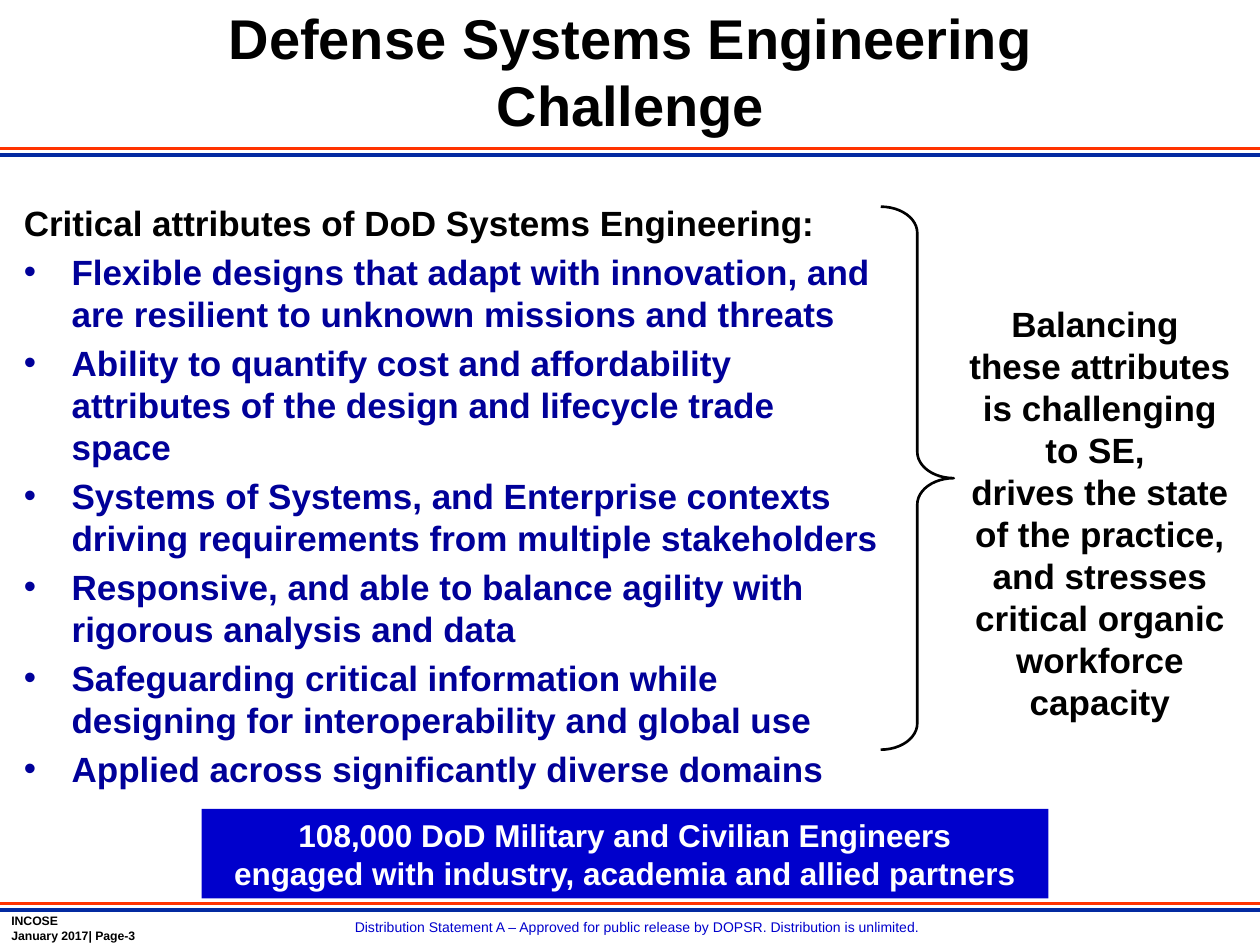
from lxml import etree
from pptx import Presentation
from pptx import util as u
from pptx.dml.color import RGBColor
from pptx.enum import shapes, text
from pptx.oxml import ns

WIDTH, HEIGHT = 10, 7.5
BLACK = RGBColor(0, 0, 0)
WHITE = RGBColor(255, 255, 255)
NAVY = RGBColor(0, 0, 0x99)
BLUE = RGBColor(0, 0, 0xCC)
RULE_BLUE = RGBColor(0x03, 0x2A, 0xA1)
RULE_RED = RGBColor(0xFF, 0x33, 0)
INDENT = 0.38

ATTRIBUTES = [
    "Flexible designs that adapt with innovation, and are resilient to unknown missions and threats",
    "Ability to quantify cost and affordability attributes of the design and lifecycle trade space",
    "Systems of Systems, and Enterprise contexts driving requirements from multiple stakeholders",
    "Responsive, and able to balance agility with rigorous analysis and data",
    "Safeguarding critical information while designing for interoperability and global use",
    "Applied across significantly diverse domains",
]
BALANCE = [
    "Balancing \vthese attributes\vis challenging\vto SE, ",
    "drives the state of the practice, and stresses critical organic workforce capacity",
]
ENGINEERS = [
    "108,000 DoD Military and Civilian Engineers",
    "engaged with industry, academia and allied partners",
]
RELEASE = ("Distribution Statement A – Approved for public release by DOPSR. "
           "Distribution is unlimited.")


def share(left, top, width, height):
    return [u.Inches(length) for length in (left, top, width, height)]


def add_bullet(para):
    props = para._p.get_or_add_pPr()
    props.set("marL", str(u.Inches(INDENT)))
    props.set("indent", str(-u.Inches(INDENT)))
    etree.SubElement(props, ns.qn("a:buFont"), typeface="Arial")
    etree.SubElement(props, ns.qn("a:buChar"), char="•")


def write(frame, lines, size, color=BLACK, bold=True, align=None,
          before=0, bullet=False, append=False):
    frame.word_wrap = True
    for index, line in enumerate(lines):
        first = index == 0 and not append
        para = frame.paragraphs[0] if first else frame.add_paragraph()
        para.text = line
        if align is not None:
            para.alignment = align
        para.space_before = u.Pt(0 if first else before)
        if bullet:
            add_bullet(para)
        for font in [para.font] + [span.font for span in para.runs]:
            font.name = "Arial"
            font.size = u.Pt(size)
            font.bold = bold
            font.color.rgb = color


def add_text(page, place, lines, size, **style):
    frame = page.shapes.add_textbox(*share(*place)).text_frame
    write(frame, lines, size, **style)
    return frame


def add_rule(page, top, color, weight):
    rule = page.shapes.add_connector(
        shapes.MSO_CONNECTOR.STRAIGHT, 0, u.Inches(top), u.Inches(WIDTH), u.Inches(top))
    rule.line.color.rgb = color
    rule.line.width = u.Pt(weight)
    etree.SubElement(rule._element.spPr, ns.qn("a:effectLst"))


def add_double_rule(page, top):
    add_rule(page, top + 0.05, RULE_BLUE, 2.25)
    add_rule(page, top, RULE_RED, 2)


def add_title(page, place, line):
    title = page.shapes.title
    title.left, title.top, title.width, title.height = share(*place)
    title.text_frame.vertical_anchor = text.MSO_ANCHOR.MIDDLE
    write(title.text_frame, [line], 32, align=text.PP_ALIGN.CENTER)


def add_brace(page, place):
    brace = page.shapes.add_shape(shapes.MSO_SHAPE.RIGHT_BRACE, *share(*place))
    brace.shadow.inherit = False
    brace.adjustments[0] = 0.36
    brace.adjustments[1] = 0.5
    brace.fill.background()
    brace.line.color.rgb = BLACK
    brace.line.width = u.Pt(1.5)


def add_banner(page, place, lines):
    banner = page.shapes.add_shape(shapes.MSO_SHAPE.RECTANGLE, *share(*place))
    banner.shadow.inherit = False
    banner.fill.solid()
    banner.fill.fore_color.rgb = BLUE
    banner.line.fill.background()
    write(banner.text_frame, lines, 18, color=WHITE, align=text.PP_ALIGN.CENTER)


def main():
    deck = Presentation()
    deck.slide_width, deck.slide_height = u.Inches(WIDTH), u.Inches(HEIGHT)
    page = deck.slides.add_slide(deck.slide_layouts[5])
    center = text.PP_ALIGN.CENTER

    add_double_rule(page, 1.18)
    add_double_rule(page, 7.17)
    add_text(page, (1.36, 7.24, 7.4, 0.24), [RELEASE], 8,
             color=BLUE, bold=False, align=center)
    footer = add_text(page, (0.09, 7.2, 2.06, 0.34), ["INCOSE", "January 2017| Page-3"], 7)
    footer.margin_left = 0

    add_title(page, (1.13, 0, 7.75, 1.12), "Defense Systems Engineering Challenge")
    body = add_text(page, (0.09, 1.55, 7.01, 5.07),
                    ["Critical attributes of DoD Systems Engineering:"], 20)
    write(body, ATTRIBUTES, 20, color=NAVY, before=4, bullet=True, append=True)
    add_brace(page, (6.99, 1.64, 0.58, 4.31))
    add_text(page, (7.46, 2.35, 2.54, 3.47), BALANCE, 20, align=center)
    add_banner(page, (1.6, 6.42, 6.72, 0.71), ENGINEERS)
    deck.save("out.pptx")


if __name__ == "__main__":
    main()
